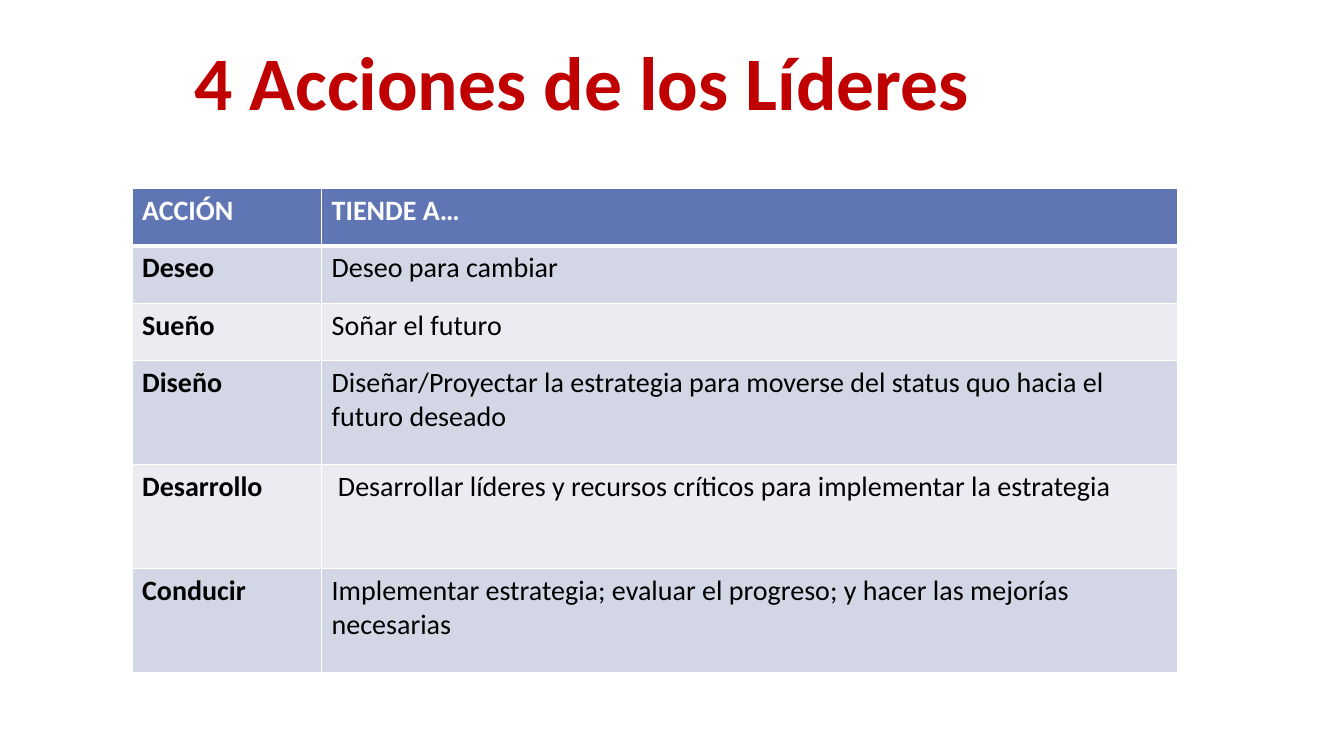
"""Build the slide on the four actions of leaders."""
from typing import NamedTuple

from lxml.etree import SubElement
from pptx import Presentation
from pptx.dml.color import RGBColor
from pptx.enum.text import MSO_ANCHOR
from pptx.oxml.ns import qn
from pptx.slide import Slide
from pptx.table import _Cell
from pptx.text.text import _Paragraph
from pptx.util import Inches, Pt

FONT = "Calibri"
RED = RGBColor(0xC0, 0x00, 0x00)
WHITE = RGBColor(0xFF, 0xFF, 0xFF)
BLACK = RGBColor(0x00, 0x00, 0x00)
HEADER_BLUE = RGBColor(0x60, 0x76, 0xB4)
BAND_DARK = RGBColor(0xD2, 0xD6, 0xE5)
BAND_LIGHT = RGBColor(0xEA, 0xEC, 0xF2)
COLUMN_WIDTHS = (1.88, 8.49)


class ActionRow(NamedTuple):
    action: str
    aim: str
    height: float


ROWS = (
    ActionRow("ACCIÓN", "TIENDE A…", 0.57),
    ActionRow("Deseo", "Deseo para cambiar", 0.57),
    ActionRow("Sueño", "Soñar el futuro", 0.57),
    ActionRow("Diseño", "Diseñar/Proyectar la estrategia para moverse del status quo "
              "hacia el futuro deseado", 1.03),
    ActionRow("Desarrollo", " Desarrollar líderes y recursos críticos para implementar "
              "la estrategia", 1.03),
    ActionRow("Conducir", "Implementar estrategia; evaluar el progreso; y hacer las "
              "mejorías necesarias", 1.03),
)


def format_text(paragraph: _Paragraph, size: int, color: RGBColor, bold: bool) -> None:
    for span in paragraph.runs:
        span.font.name = FONT
        span.font.size = Pt(size)
        span.font.bold = bold
        span.font.color.rgb = color


def add_borders(cell: _Cell, top: int, bottom: int) -> None:
    properties = cell._tc.get_or_add_tcPr()
    for tag, width in (("a:lnL", 1), ("a:lnR", 1), ("a:lnT", top), ("a:lnB", bottom)):
        line = SubElement(properties, qn(tag), w=str(Pt(width)))
        fill = SubElement(line, qn("a:solidFill"))
        SubElement(fill, qn("a:srgbClr"), val=str(WHITE))


def add_title(page: Slide) -> None:
    box = page.shapes.add_textbox(Inches(1.83), Inches(0.13), Inches(11.5), Inches(1.45))
    frame = box.text_frame
    frame.text = "4 Acciones de los Líderes"
    frame.word_wrap = True
    frame.vertical_anchor = MSO_ANCHOR.MIDDLE
    para = frame.paragraphs[0]
    para.line_spacing = 0.9
    format_text(para, 54, RED, True)


def fill_cell(cell: _Cell, text: str, row: int, column: int) -> None:
    is_header = row == 0
    add_borders(cell, top=3 if row == 1 else 1, bottom=3 if is_header else 1)
    cell.fill.solid()
    band = BAND_DARK if row % 2 else BAND_LIGHT
    cell.fill.fore_color.rgb = HEADER_BLUE if is_header else band
    cell.text_frame.text = text
    format_text(cell.text_frame.paragraphs[0], 20, WHITE if is_header else BLACK,
                is_header or column == 0)


def add_action_table(page: Slide) -> None:
    table = page.shapes.add_table(
        len(ROWS), len(COLUMN_WIDTHS), Inches(1.31), Inches(1.87),
        Inches(sum(COLUMN_WIDTHS)), Inches(sum(row.height for row in ROWS))).table
    for column, width in zip(table.columns, COLUMN_WIDTHS):
        column.width = Inches(width)
    for row_index, row in enumerate(ROWS):
        table.rows[row_index].height = Inches(row.height)
        for column_index, text in enumerate((row.action, row.aim)):
            fill_cell(table.cell(row_index, column_index), text, row_index, column_index)


def main() -> None:
    deck = Presentation()
    deck.slide_width = Inches(13.33)
    deck.slide_height = Inches(7.5)
    page = deck.slides.add_slide(deck.slide_layouts[6])
    add_title(page)
    add_action_table(page)
    deck.save("out.pptx")


if __name__ == "__main__":
    main()
